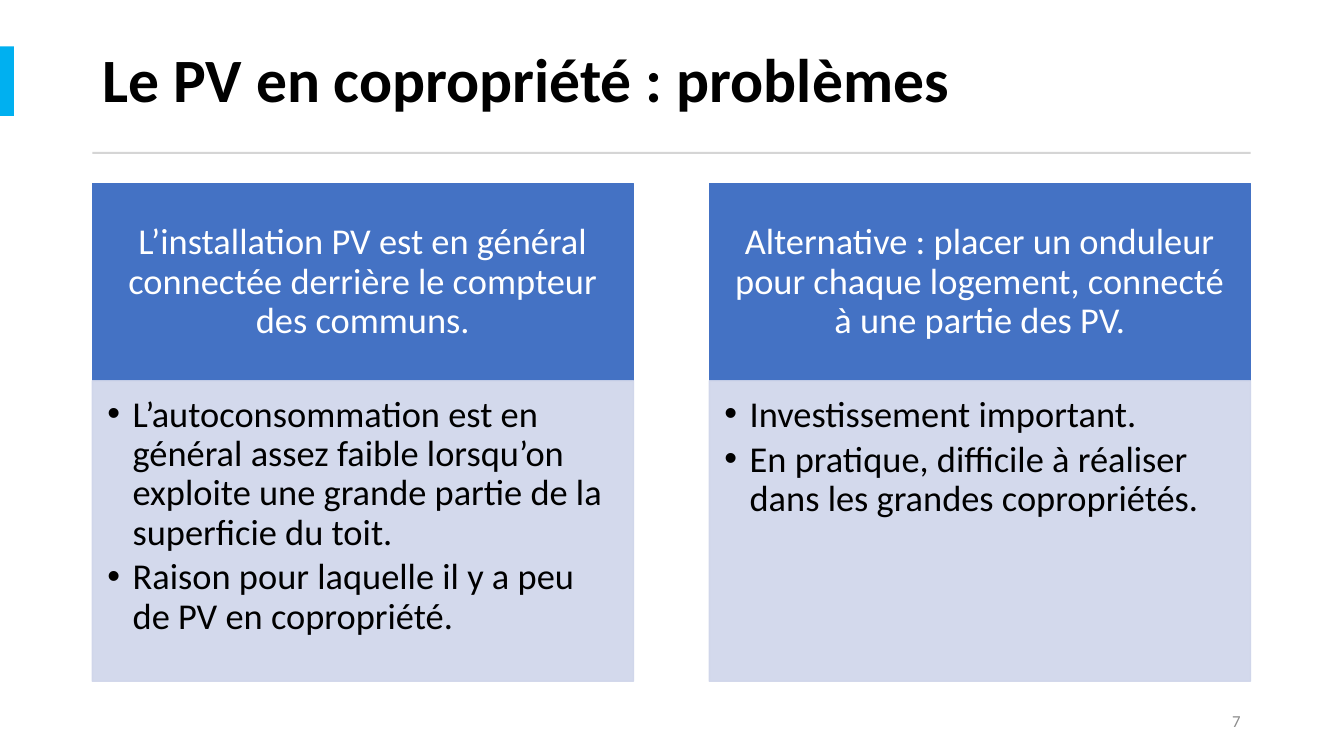
from lxml.etree import SubElement
from pptx import Presentation
from pptx.dml.color import RGBColor
from pptx.enum.shapes import MSO_SHAPE
from pptx.enum.text import MSO_ANCHOR, PP_ALIGN
from pptx.oxml.ns import qn
from pptx.util import Pt

LEFT, WIDTH, GAP = 66, 827.3, 54.1
HEAD = dict(size=Pt(26), name="Calibri", color="FFFFFF")
ITEM = dict(HEAD, color="000000")
TITLE = dict(ITEM, size=Pt(44), bold=True)
NUMBER = dict(ITEM, size=Pt(12), color="8C8C8C")

COLUMNS = [
    ("L’installation PV est en général connectée derrière le compteur des communs.",
     ["L’autoconsommation est en général assez faible lorsqu’on exploite une "
      "grande partie de la superficie du toit.",
      "Raison pour laquelle il y a peu de PV en copropriété."]),
    ("Alternative : placer un onduleur pour chaque logement, connecté à une partie des PV.",
     ["Investissement important.",
      "En pratique, difficile à réaliser dans les grandes copropriétés."]),
]


def paint(part, color, alpha=None):
    """Give a fill a solid colour, with an opacity in percent if set."""
    part.solid()
    part.fore_color.rgb = RGBColor.from_string(color)
    if alpha:
        tint = part._xPr.find(qn("a:solidFill"))[0]
        SubElement(tint, qn("a:alpha"), val=str(alpha * 1000))


def add_rect(slide, box, color, alpha=None, edge=False):
    rect = slide.shapes.add_shape(MSO_SHAPE.RECTANGLE, *map(Pt, box))
    rect.shadow.inherit = False
    paint(rect.fill, color, alpha)
    if edge:
        rect.line.width = Pt(1)
        paint(rect.line.fill, color, alpha)
    else:
        rect.line.fill.background()
    return rect


def add_bullet(para):
    props = para._p.get_or_add_pPr()
    props.set("marL", str(Pt(18)))
    props.set("indent", str(-Pt(18)))
    SubElement(props, qn("a:buFont"), typeface="Arial")
    SubElement(props, qn("a:buChar"), char="•")


def write(shape, lines, style, align=PP_ALIGN.LEFT, anchor=MSO_ANCHOR.MIDDLE,
          inset=(7.2, 3.6, 7.2, 3.6), space=0.9, after=0, bullet=False):
    frame = shape.text_frame
    frame.word_wrap = True
    frame.vertical_anchor = anchor
    for side, size in zip(("left", "top", "right", "bottom"), inset):
        setattr(frame, f"margin_{side}", Pt(size))
    for i, line in enumerate(lines):
        para = frame.add_paragraph() if i else frame.paragraphs[0]
        para.alignment = align
        para.line_spacing = space
        para.space_after = Pt(after)
        if bullet:
            add_bullet(para)
        run = para.add_run()
        run.text = line
        for key, value in style.items():
            if key == "color":
                run.font.color.rgb = RGBColor.from_string(value)
            else:
                setattr(run.font, key, value)


def add_header(slide, box, title):
    left, top, width, height = box
    add_rect(slide, (0, top + 13.7, 10, 49.7), "00B0F0")
    add_rect(slide, (left, top + height + 9.9, width, 1.4), "D5D5D5")
    write(slide.shapes.add_textbox(*map(Pt, box)), [title], TITLE)


def add_column(slide, box, head, items):
    left, top, width, height = box
    split = 140.8
    cap = add_rect(slide, (left, top, width, split), "4472C4", edge=True)
    write(cap, [head], HEAD, align=PP_ALIGN.CENTER, inset=(14.4, 8.6, 14.4, 8.6))
    body = add_rect(slide, (left, top + split, width, height - split),
                    "CFD5EA", alpha=90, edge=True)
    write(body, items, ITEM, anchor=MSO_ANCHOR.TOP,
          inset=(10.8, 10.8, 14.4, 16.6), after=3.9, bullet=True)


def add_number(slide, box, number):
    write(slide.shapes.add_textbox(*map(Pt, box)), [number], NUMBER,
          align=PP_ALIGN.RIGHT, space=1.0)


def main():
    deck = Presentation()
    deck.slide_width, deck.slide_height = Pt(960), Pt(540)
    slide = deck.slides.add_slide(deck.slide_layouts[6])
    add_header(slide, (LEFT, 19.4, WIDTH, 79.2), "Le PV en copropriété : problèmes")
    width = (WIDTH - GAP) / 2
    for i, (head, items) in enumerate(COLUMNS):
        add_column(slide, (LEFT + i * (width + GAP), 131.2, width, 355.4), head, items)
    add_number(slide, (LEFT + WIDTH - 144.7, 500.5, 144.7, 28.8), "7")
    deck.save("out.pptx")


if __name__ == "__main__":
    main()
